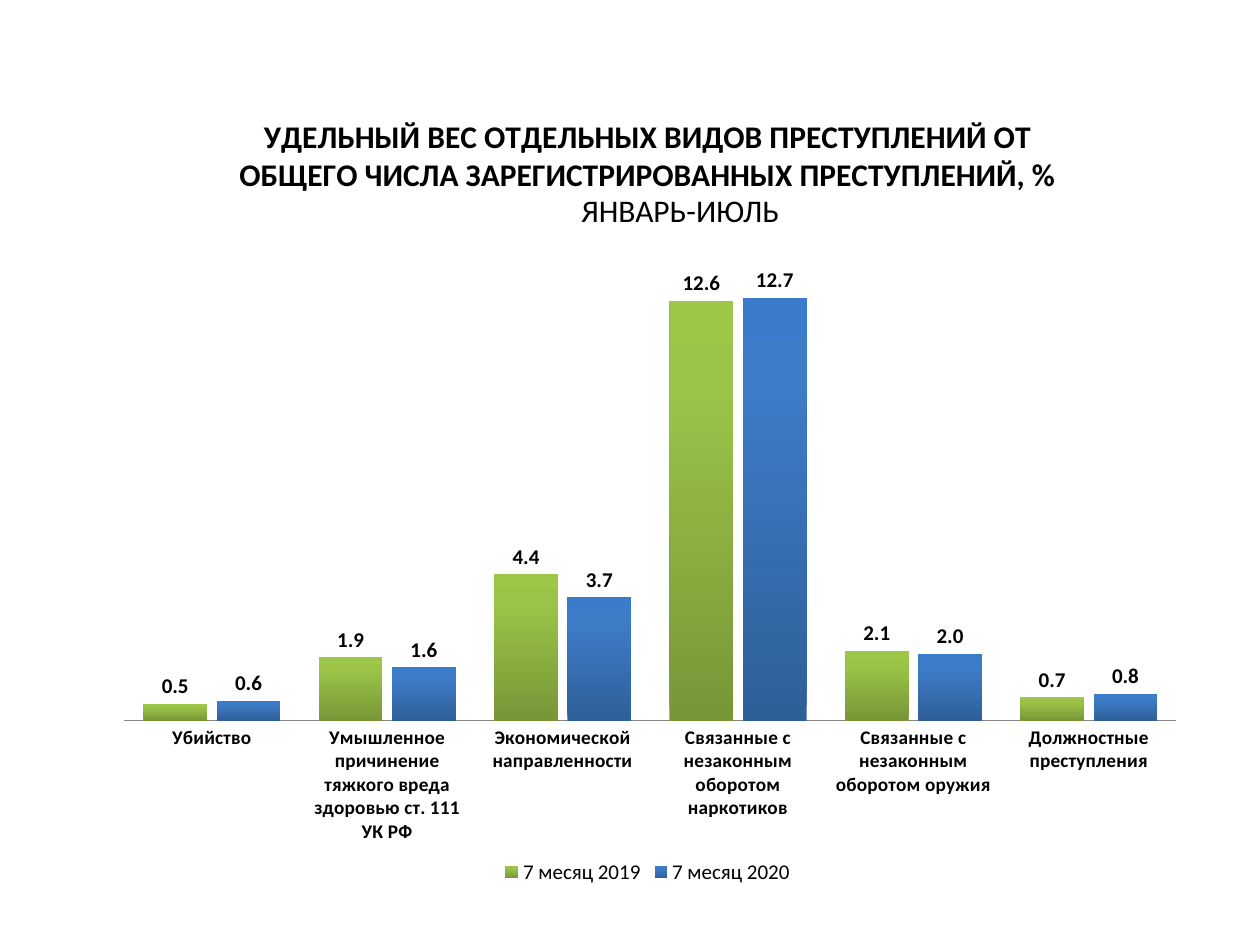
import pptx
import pptx.chart.data
import pptx.dml.color
import pptx.enum.chart
import pptx.enum.text
import pptx.oxml
import pptx.oxml.ns
import pptx.util
from pptx.util import Pt

FONT = "Calibri"
BLACK = "000000"
TITLE = ("УДЕЛЬНЫЙ ВЕС ОТДЕЛЬНЫХ ВИДОВ ПРЕСТУПЛЕНИЙ ОТ "
         "ОБЩЕГО ЧИСЛА ЗАРЕГИСТРИРОВАННЫХ ПРЕСТУПЛЕНИЙ, %")
CATEGORIES = [
    "Убийство",
    "Умышленное причинение тяжкого вреда здоровью ст. 111 УК РФ",
    "Экономической направленности",
    "Связанные с незаконным оборотом наркотиков",
    "Связанные с незаконным оборотом оружия",
    "Должностные преступления",
]
SERIES = [
    ("7 месяц 2019", [0.5, 1.9, 4.4, 12.6, 2.1, 0.7], ["779737", "9BC348", "9DC746"]),
    ("7 месяц 2020", [0.6, 1.6, 3.7, 12.7, 2.0, 0.8], ["2F5F99", "3D7CC7", "3A7CCB"]),
]
GRADIENT_POSITIONS = [0, 80, 100]


def color(value):
    return pptx.dml.color.RGBColor.from_string(value)


def set_font(font, size, bold=False):
    font.name = FONT
    font.size = Pt(size)
    font.bold = bold
    font.color.rgb = color(BLACK)


def fill_gradient(series, colors):
    stops = "".join(
        f'<a:gs pos="{position * 1000}"><a:srgbClr val="{value}"/></a:gs>'
        for position, value in zip(GRADIENT_POSITIONS, colors))
    gradient = pptx.oxml.parse_xml(
        f'<a:gradFill rotWithShape="1" {pptx.oxml.ns.nsdecls("a")}>'
        f'<a:gsLst>{stops}</a:gsLst><a:lin ang="16200000" scaled="0"/></a:gradFill>')
    series.format.line.fill.background()
    series._element.get_or_add_spPr().insert(0, gradient)


def place_plot(chart, left, top, width, height):
    plot_area = chart._chartSpace.chart.plotArea
    for layout in plot_area.findall(pptx.oxml.ns.qn("c:layout")):
        plot_area.remove(layout)
    plot_area.insert(0, pptx.oxml.parse_xml(
        f'<c:layout {pptx.oxml.ns.nsdecls("c")}><c:manualLayout>'
        '<c:layoutTarget val="inner"/><c:xMode val="edge"/><c:yMode val="edge"/>'
        f'<c:x val="{left}"/><c:y val="{top}"/><c:w val="{width}"/><c:h val="{height}"/>'
        '</c:manualLayout></c:layout>'))


def style_axes(chart):
    category_axis = chart.category_axis
    category_axis.major_tick_mark = pptx.enum.chart.XL_TICK_MARK.NONE
    category_axis.format.line.color.rgb = color("868686")
    category_axis.format.line.width = Pt(0.75)
    set_font(category_axis.tick_labels.font, 11, True)
    value_axis = chart.value_axis
    value_axis.minimum_scale = 0
    value_axis.maximum_scale = 14
    value_axis.has_major_gridlines = False
    value_axis.visible = False


def style_series(series, colors):
    fill_gradient(series, colors)
    series.invert_if_negative = False
    labels = series.data_labels
    labels.show_value = True
    labels.number_format = "0.0"
    labels.number_format_is_linked = False
    labels.position = pptx.enum.chart.XL_LABEL_POSITION.OUTSIDE_END
    set_font(labels.font, 12, True)


def add_crime_chart(slide):
    data = pptx.chart.data.CategoryChartData(number_format="0.0")
    data.categories = CATEGORIES
    for name, values, _ in SERIES:
        data.add_series(name, values)
    chart = slide.shapes.add_chart(
        pptx.enum.chart.XL_CHART_TYPE.COLUMN_CLUSTERED,
        Pt(59.8), Pt(49), Pt(620.6), Pt(459.4), data).chart
    set_font(chart.font, 18)

    chart.has_title = True
    chart.chart_title.include_in_layout = False
    title = chart.chart_title.text_frame
    title.text = TITLE
    set_font(title.paragraphs[0].font, 18, True)

    chart.has_legend = True
    chart.legend.position = pptx.enum.chart.XL_LEGEND_POSITION.BOTTOM
    chart.legend.include_in_layout = False
    set_font(chart.legend.font, 12)

    plot = chart.plots[0]
    plot.gap_width = 60
    plot.overlap = -15
    plot.vary_by_categories = False
    for series, (_, _, colors) in zip(plot.series, SERIES):
        style_series(series, colors)
    style_axes(chart)
    place_plot(chart, 0.018, 0.21, 0.969, 0.58)


def add_period(slide):
    frame = slide.shapes.add_textbox(Pt(324), Pt(105.8), Pt(129.6), Pt(28.8)).text_frame
    frame.word_wrap = False
    frame.auto_size = pptx.enum.text.MSO_AUTO_SIZE.SHAPE_TO_FIT_TEXT
    paragraph = frame.paragraphs[0]
    paragraph.text = "ЯНВАРЬ-ИЮЛЬ"
    paragraph.alignment = pptx.enum.text.PP_ALIGN.CENTER
    set_font(paragraph.font, 18)


def main():
    presentation = pptx.Presentation()
    presentation.slide_width = Pt(720)
    presentation.slide_height = Pt(540)
    slide = presentation.slides.add_slide(presentation.slide_layouts[6])
    add_crime_chart(slide)
    add_period(slide)
    presentation.save("out.pptx")


if __name__ == "__main__":
    main()
